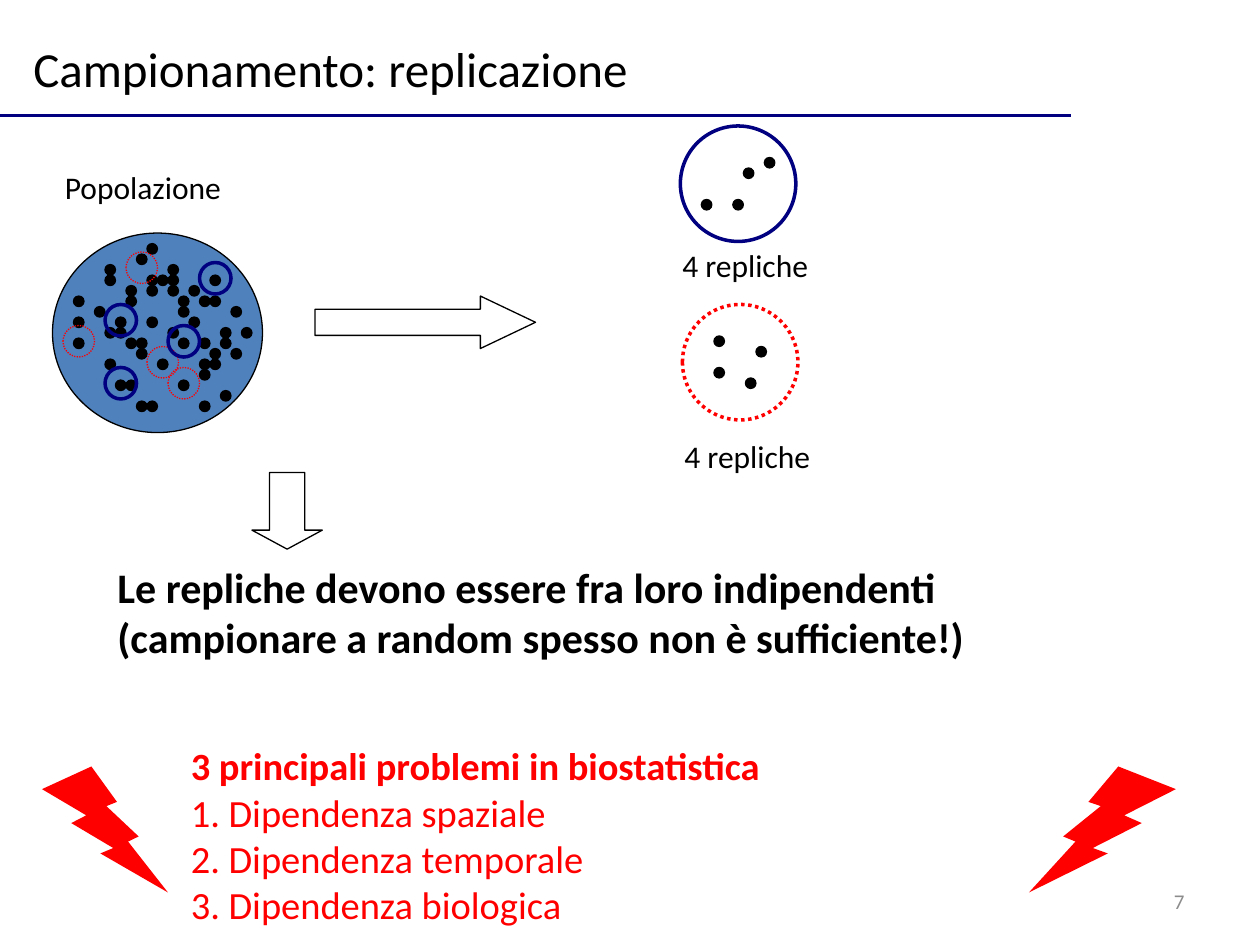
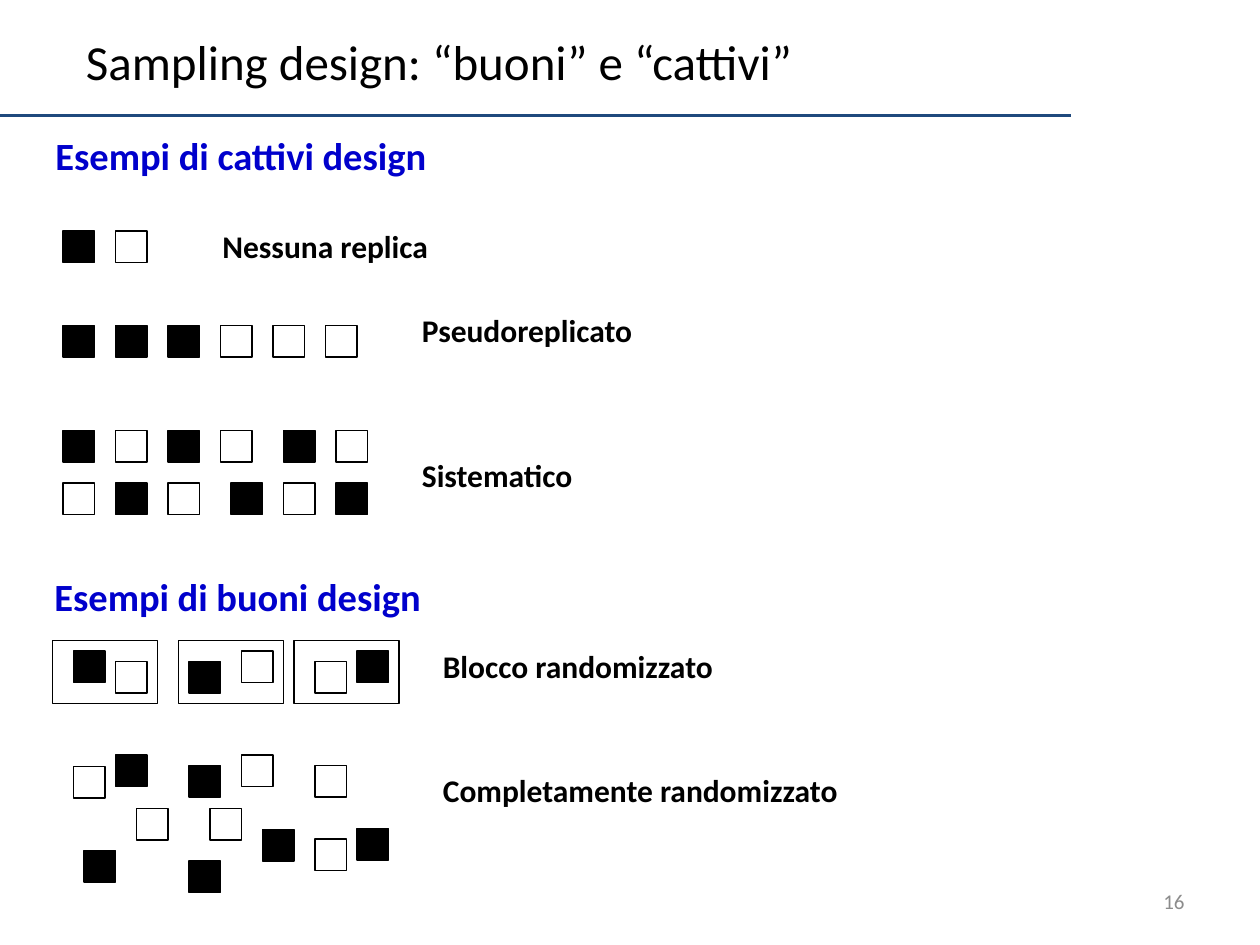
from pptx import Presentation
from pptx.dml.color import RGBColor
from pptx.enum.dml import MSO_LINE
from pptx.enum.shapes import MSO_CONNECTOR, MSO_SHAPE
from pptx.enum.text import MSO_ANCHOR, PP_ALIGN
from pptx.oxml.ns import qn
from pptx.util import Inches, Pt
from lxml import etree

# Shared look: a grid of 120 columns by 90 rows covers each slide
CELL = Inches(10) / 120
FONT = "Calibri"
BLACK, WHITE, RED, NAVY = "000000", "FFFFFF", "FF0000", "000080"
BLUE, HEAD, GREY = "4F81BD", "0000CC", "8C8C8C"
OVAL, RECT = MSO_SHAPE.OVAL, MSO_SHAPE.RECTANGLE


def draw(slide, kind, box, fill=None, line=BLACK, width=0.75, dash=None):
    shape = slide.shapes.add_shape(kind, *[round(n * CELL) for n in box])
    shape.shadow.inherit = False
    for part, color in ((shape.fill, fill), (shape.line.fill, line)):
        if color:
            part.solid()
            part.fore_color.rgb = RGBColor.from_string(color)
        else:
            part.background()
    if line:
        shape.line.width = Pt(width)
    if dash:
        shape.line.dash_style = dash
    return shape


def write(slide, text, box, size=18, color=BLACK, bold=False, wrap=False,
          align=PP_ALIGN.LEFT):
    frame = slide.shapes.add_textbox(*[round(n * CELL) for n in box]).text_frame
    frame.word_wrap = wrap
    frame.vertical_anchor = MSO_ANCHOR.MIDDLE
    frame.text = text
    for para in frame.paragraphs:
        para.alignment = align
        for run in para.runs:
            run.font.name = FONT
            run.font.size = Pt(size)
            run.font.bold = bold
            run.font.color.rgb = RGBColor.from_string(color)
    return frame


deck = Presentation()
deck.slide_width, deck.slide_height = Inches(10), Inches(7.5)

# Title, rule and page number of both slides
pages = []
for title, box, rule, page in (
        ("Campionamento: replicazione", (2, 3.1, 60.5, 6.8), NAVY, "7"),
        ("Sampling design: “buoni” e “cattivi”", (7, 2.4, 70.6, 6.8), "1F497D", "16")):
    slide = deck.slides.add_slide(deck.slide_layouts[6])
    write(slide, title, box, 28)
    write(slide, page, (86, 83.4, 28, 4.8), 12, GREY, wrap=True, align=PP_ALIGN.RIGHT)
    bar = slide.shapes.add_connector(
        MSO_CONNECTOR.STRAIGHT, 0, round(11 * CELL), round(102 * CELL), round(11 * CELL))
    bar.line.width = Pt(2)
    bar.line.color.rgb = RGBColor.from_string(rule)
    etree.SubElement(bar.element.spPr, qn("a:effectLst"))
    pages.append(slide)
first, second = pages

# Population: the columns that hold a dot, row by row
draw(first, OVAL, (5, 22.2, 20, 19), BLUE)
write(first, "Popolazione", (5, 15.4, 17.5, 4.8))
crowd = {
    23: [14], 24: [13], 25: [10, 16], 26: [10, 14, 15, 16, 20],
    27: [12, 14, 16, 18], 28: [7, 12, 17, 19, 20], 29: [9, 17, 22],
    30: [7, 11, 14, 18], 31: [10, 11, 16, 21, 23],
    32: [7, 12, 13, 17, 19, 21], 33: [13, 20, 22], 34: [10, 15, 19, 20],
    35: [19], 36: [11, 12, 17], 37: [21], 38: [13, 14, 19],
}
dots = [(col, row + 0.2) for row, cols in crowd.items() for col in cols]

# Dots inside the two enlarged samples
dots += [(66.8, 19), (69.8, 19), (70.8, 16), (72.8, 15)]
dots += [(68, 32), (72, 33), (68, 35), (71, 36)]
for col, row in dots:
    draw(first, OVAL, (col, row, 1, 1), BLACK)

# Sample rings: small ones in the population, one large each
for spots, large, color, thin, dash in (
        ([(14, 33), (16, 35), (12, 24), (6, 31)], (65, 29), RED, 0.75, MSO_LINE.ROUND_DOT),
        ([(19, 25), (10, 35), (10, 29), (16, 31)], (64.8, 12), NAVY, 2, None)):
    for col, row in spots:
        draw(first, OVAL, (col, row, 3, 3), None, color, thin, dash)
    draw(first, OVAL, (*large, 11, 11), None, color, 2, dash)
for col, row in ((63.8, 22.8), (64, 41)):
    write(first, "4 repliche", (col, row, 14.5, 4.8))

# Block arrows
for kind, box, tip in ((MSO_SHAPE.RIGHT_ARROW, (30, 28.2, 21, 5), 1.05),
                       (MSO_SHAPE.DOWN_ARROW, (24, 45, 6.7, 7.3), 0.27)):
    arrow = draw(first, kind, box, WHITE)
    arrow.adjustments[0] = 0.5
    arrow.adjustments[1] = tip

# Message and the three problems between two bolts
write(first, "Le repliche devono essere fra loro indipendenti "
      "(campionare a random spesso non è sufficiente!)",
      (10, 52.8, 99, 10.9), 24, bold=True, wrap=True)
frame = write(first, "3 principali problemi in biostatistica\n1. Dipendenza spaziale\n"
              "2. Dipendenza temporale\n3. Dipendenza biologica",
              (17, 70, 90, 19), 22, RED, wrap=True)
frame.paragraphs[0].runs[0].font.bold = True
for col, width, flip in ((4, 12, "0"), (98, 14, "1")):
    bolt = draw(first, MSO_SHAPE.LIGHTNING_BOLT, (col, 73, width, 12), RED, None)
    bolt.element.spPr.find(qn("a:xfrm")).set("flipH", flip)

# Frames of the randomized blocks
for col in (5, 17, 28):
    draw(second, RECT, (col, 61, 10, 6))

# Plots in straight rows: B is a black square, W an open one
plots = []
for row, cols, marks in (
        (22, (6, 11), "BW"),
        (31, (6, 11, 16, 21, 26, 31), "BBBWWW"),
        (41, (6, 11, 16, 21, 27, 32), "BWBWBW"),
        (46, (6, 11, 16, 22, 27, 32), "WBWBWB")):
    plots += [(col, row, mark) for col, mark in zip(cols, marks)]

# Plots in blocks, then fully at random
plots += [(7, 62, "B"), (11, 63, "W"), (18, 63, "B"),
          (23, 62, "W"), (34, 62, "B"), (30, 63, "W")]
plots += [(11, 71.9, "B"), (7, 73, "W"), (18, 72.9, "B"), (23, 71.9, "W"),
          (30, 72.9, "W"), (13, 77, "W"), (20, 77, "W"), (25, 79, "B"),
          (34, 78.9, "B"), (30, 79.9, "W"), (8, 81, "B"), (18, 82, "B")]
for col, row, mark in plots:
    draw(second, RECT, (col, row, 3, 3), BLACK if mark == "B" else None)

# Headings and labels of the designs
for text, col, row, width in (("Esempi di cattivi design", 4.1, 12, 38.3),
                              ("Esempi di buoni design", 4, 54, 37.7)):
    write(second, text, (col, row, width, 5.6), 22, HEAD, True)
for text, col, row, width in (
        ("Nessuna replica", 20, 21, 22.2),
        ("Pseudoreplicato", 39, 29, 22.6),
        ("Sistematico", 39, 42.8, 56),
        ("Blocco randomizzato", 41, 61, 28.3),
        ("Completamente randomizzato", 41, 72.8, 76)):
    write(second, text, (col, row, width, 4.8), bold=True, wrap=width > 50)

deck.save("out.pptx")
